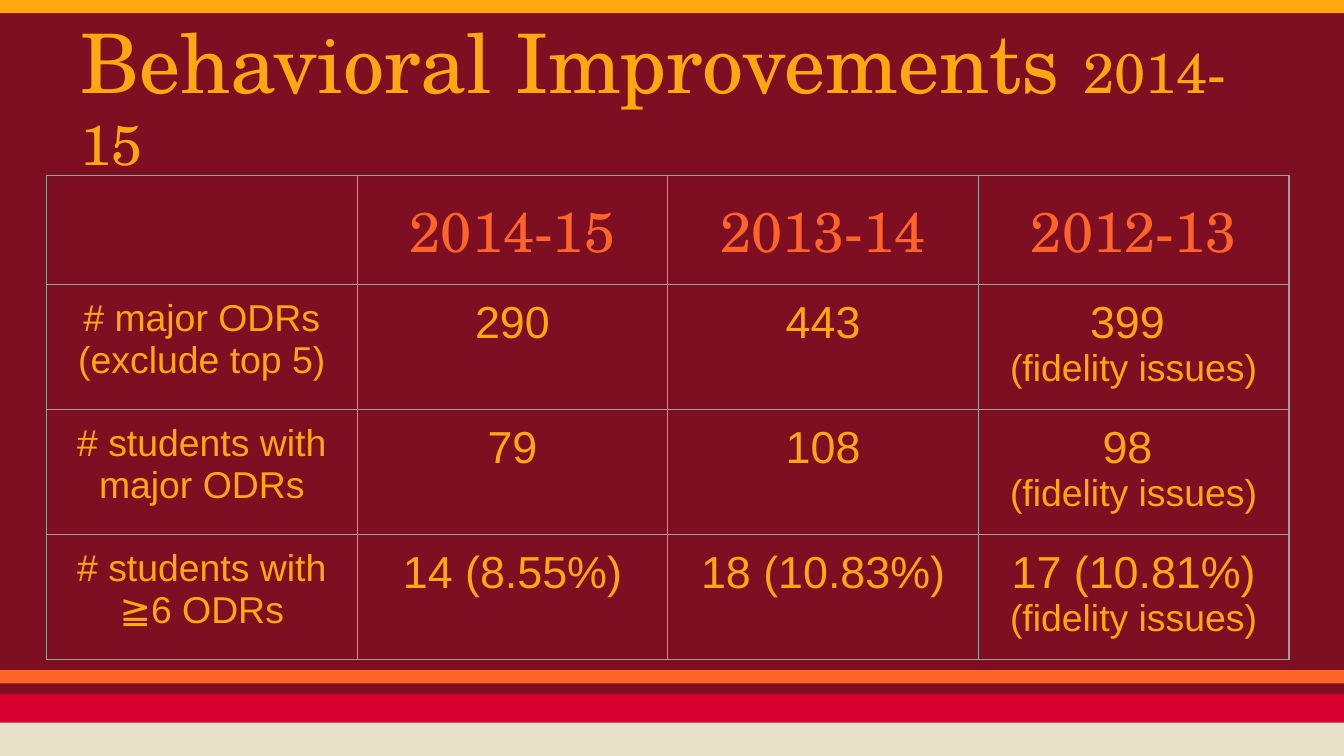
from typing import NamedTuple

from lxml import etree
from pptx import Presentation
from pptx.dml.color import RGBColor
from pptx.enum import shapes as sh, text as tx
from pptx.oxml import ns
from pptx.util import Cm, Pt

WINE = RGBColor(0x7E, 0x0F, 0x23)
GOLD = RGBColor(0xFF, 0xA7, 0x11)
RED = RGBColor(0xD6, 0x00, 0x30)
CREAM = RGBColor(0xE9, 0xE0, 0xC9)
CORAL = RGBColor(0xFF, 0x64, 0x28)
GRAY = RGBColor(0x9E, 0x9E, 0x9E)
SERIF = "TeX Gyre Schola"
SANS = "Arial"
WIDE = Cm(25.4)
PAD = Cm(0.25)


class Band(NamedTuple):
    top: float
    high: float
    color: RGBColor


class Run(NamedTuple):
    text: str
    size: int


class Style(NamedTuple):
    face: str
    color: RGBColor
    align: tx.PP_ALIGN


Line = list[Run]

HEAD = Style(SERIF, GOLD, tx.PP_ALIGN.LEFT)
YEAR = Style(SERIF, CORAL, tx.PP_ALIGN.CENTER)
BODY = Style(SANS, GOLD, tx.PP_ALIGN.CENTER)

BANDS = [
    Band(0, 0.25, GOLD),
    Band(13.11, 0.64, RED),
    Band(13.66, 0.64, CREAM),
    Band(12.67, 0.25, CORAL),
]
TITLE = [[Run("Behavioral Improvements ", 44), Run("2014-15", 30)]]
YEARS = ["2014-15", "2013-14", "2012-13"]
NOTE = Run("(fidelity issues)", 20)


def label(text: str) -> list[Line]:
    return [[Run(text, 20)]]


def count(text: str) -> list[Line]:
    return [[Run(text, 24)]]


ROWS = [
    [[]] + [[[Run(year, 30)]] for year in YEARS],
    [label("# major ODRs (exclude top 5)"), count("290"), count("443"),
     count("399 ") + [[NOTE]]],
    [label("# students with major ODRs"), count("79"), count("108"),
     count("98 ") + [[NOTE]]],
    [label("# students with ≧6 ODRs"), count("14 (8.55%)"),
     count("18 (10.83%)"), [[Run("17 (10.81%) ", 24), NOTE]]],
]


def write(frame, lines: list[Line], style: Style) -> None:
    for i, line in enumerate(lines):
        para = frame.add_paragraph() if i else frame.paragraphs[0]
        para.alignment = style.align
        para.font.name = style.face
        para.font.color.rgb = style.color
        if len(line) == 1:
            para.font.size = Pt(line[0].size)
        for part in line:
            run = para.add_run()
            run.text = part.text
            if len(line) > 1:
                run.font.size = Pt(part.size)


def pad(item) -> None:
    item.margin_left = item.margin_right = PAD
    item.margin_top = item.margin_bottom = PAD


def draw_band(slide, band: Band) -> None:
    bar = slide.shapes.add_shape(
        sh.MSO_SHAPE.RECTANGLE, 0, Cm(band.top), WIDE, Cm(band.high))
    bar.shadow.inherit = False
    bar.fill.solid()
    bar.fill.fore_color.rgb = band.color
    bar.line.fill.background()


def draw_title(slide) -> None:
    box = slide.shapes.add_textbox(Cm(1.27), Cm(0.58), Cm(22.86), Cm(2.39))
    frame = box.text_frame
    frame.word_wrap = True
    frame.vertical_anchor = tx.MSO_ANCHOR.MIDDLE
    pad(frame)
    write(frame, TITLE, HEAD)


def edge(cell) -> None:
    props = cell._tc.get_or_add_tcPr()
    for i, side in enumerate("LRTB"):
        line = etree.Element(ns.qn(f"a:ln{side}"), w=str(Pt(0.75)))
        fill = etree.SubElement(line, ns.qn("a:solidFill"))
        etree.SubElement(fill, ns.qn("a:srgbClr"), val=str(GRAY))
        props.insert(i, line)


def draw_table(slide) -> None:
    highs = [Cm(2.06)] + [Cm(2.24)] * 3
    wide = Cm(5.87)
    table = slide.shapes.add_table(
        len(ROWS), len(ROWS[0]), Cm(0.88), Cm(3.32),
        wide * len(ROWS[0]), sum(highs)).table
    table.first_row = table.horz_banding = False
    for col in table.columns:
        col.width = wide
    for r, (row, high) in enumerate(zip(ROWS, highs)):
        table.rows[r].height = high
        for c, lines in enumerate(row):
            cell = table.cell(r, c)
            pad(cell)
            cell.fill.background()
            edge(cell)
            write(cell.text_frame, lines, BODY if r else YEAR)


def main() -> None:
    deck = Presentation()
    deck.slide_width = WIDE
    deck.slide_height = Cm(14.29)
    slide = deck.slides.add_slide(deck.slide_layouts[6])
    slide.background.fill.solid()
    slide.background.fill.fore_color.rgb = WINE
    for band in BANDS:
        draw_band(slide, band)
    draw_title(slide)
    draw_table(slide)
    deck.save("out.pptx")


if __name__ == "__main__":
    main()
